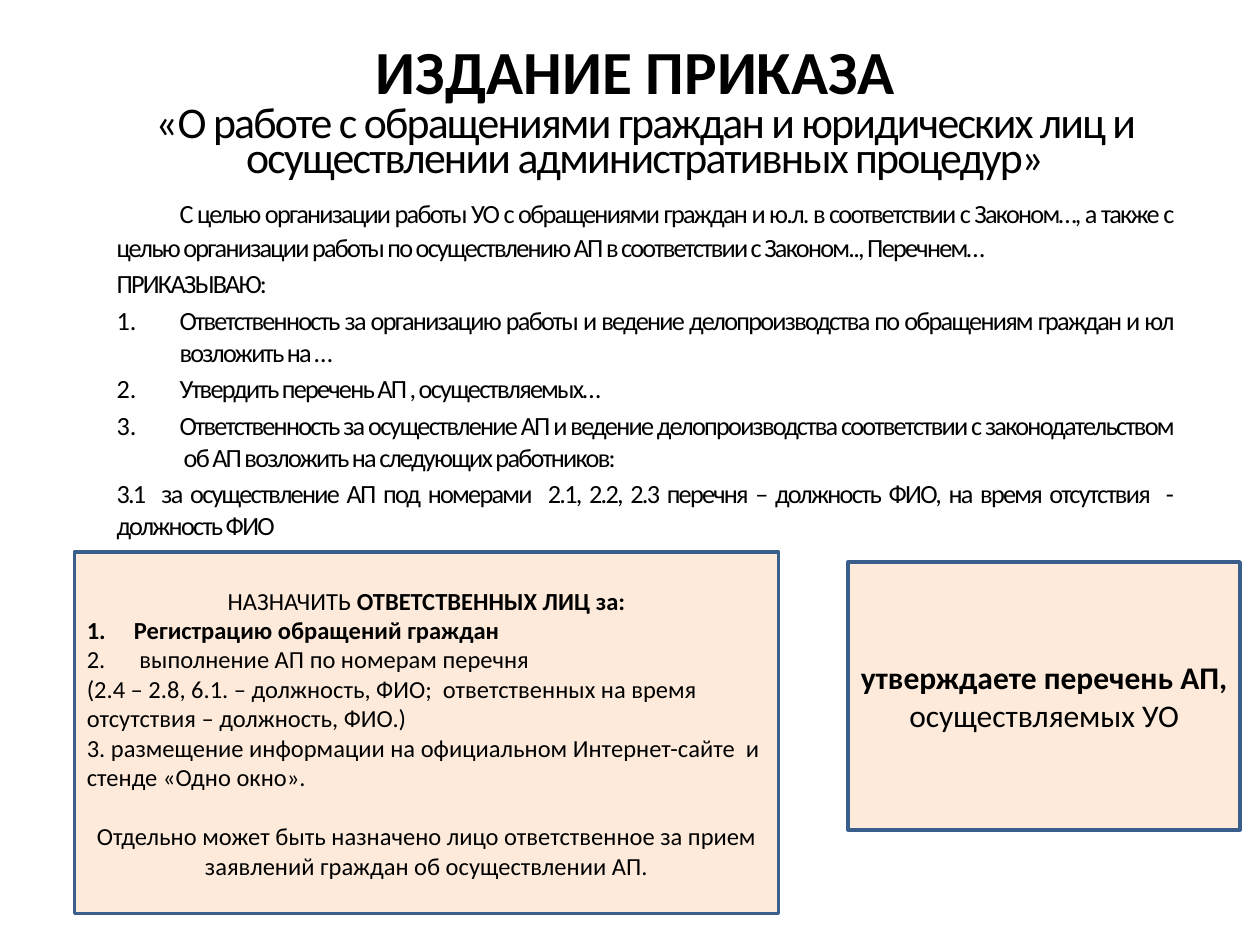
import pptx
import pptx.dml.color
import pptx.enum.shapes
import pptx.enum.text
import pptx.oxml.ns
import pptx.util
from lxml import etree
from pptx.util import Cm, Pt

BLACK = pptx.dml.color.RGBColor(0x00, 0x00, 0x00)
PEACH = pptx.dml.color.RGBColor(0xFD, 0xEA, 0xDA)
BLUE = pptx.dml.color.RGBColor(0x3A, 0x5F, 0x8C)
FONT = "Calibri"
ALIGN = pptx.enum.text.PP_ALIGN
ANCHOR = pptx.enum.text.MSO_ANCHOR


def prepare_frame(box, anchor):
    frame = box.text_frame
    frame.word_wrap = True
    frame.vertical_anchor = anchor
    return frame


def add_text_box(page, left, top, width, height, anchor=ANCHOR.TOP):
    box = page.shapes.add_textbox(Cm(left), Cm(top), Cm(width), Cm(height))
    return prepare_frame(box, anchor)


def add_panel(page, left, top, width, height):
    panel = page.shapes.add_shape(
        pptx.enum.shapes.MSO_SHAPE.RECTANGLE, Cm(left), Cm(top), Cm(width), Cm(height)
    )
    panel.shadow.inherit = False
    panel.fill.solid()
    panel.fill.fore_color.rgb = PEACH
    panel.line.color.rgb = BLUE
    panel.line.width = Pt(2)
    return prepare_frame(panel, ANCHOR.MIDDLE)


def add_para(frame, align, before=0, line=None):
    first = frame.paragraphs[0]
    para = frame.add_paragraph() if first.runs else first
    para.alignment = align
    para.space_before = Pt(before)
    if line:
        para.line_spacing = Pt(line)
    return para


def add_span(para, text, size, bold=False, spacing=0):
    span = para.add_run()
    span.text = text
    span.font.name = FONT
    span.font.size = Pt(size)
    span.font.bold = bold
    span.font.color.rgb = BLACK
    if spacing:
        span.font._element.set("spc", str(spacing * 100))


def number_para(para, indent):
    properties = para._p.get_or_add_pPr()
    properties.set("marL", str(Cm(indent)))
    properties.set("indent", str(-Cm(indent)))
    font = etree.SubElement(properties, pptx.oxml.ns.qn("a:buFont"))
    font.set("typeface", FONT)
    numbering = etree.SubElement(properties, pptx.oxml.ns.qn("a:buAutoNum"))
    numbering.set("type", "arabicPeriod")


def add_title(page):
    frame = add_text_box(page, 1.5, 0.76, 22.63, 1.32, ANCHOR.MIDDLE)
    add_span(add_para(frame, ALIGN.CENTER), "ИЗДАНИЕ ПРИКАЗА", 35, bold=True)


def add_order(page):
    frame = add_text_box(page, 2.1, 2.13, 21.8, 13.8)
    subject = add_para(frame, ALIGN.CENTER, before=5, line=20)
    add_span(subject, "«", 25)
    add_span(
        subject,
        "О работе с обращениями граждан и юридических лиц и осуществлении административных процедур»",
        25,
        spacing=-1,
    )
    purpose = add_para(frame, ALIGN.JUSTIFY, before=4)
    add_span(purpose, "\t", 20, spacing=-1)
    add_span(
        purpose,
        "С целью организации работы УО с обращениями граждан и ю.л. в соответствии с Законом…, "
        "а также с целью организации работы по осуществлению АП в соответствии с Законом.., Перечнем…",
        15,
        spacing=-1,
    )
    clauses = [
        ("ПРИКАЗЫВАЮ:", False),
        ("Ответственность за организацию работы и ведение делопроизводства "
         "по обращениям граждан и юл возложить на …", True),
        ("Утвердить перечень АП , осуществляемых…", True),
        ("Ответственность за осуществление АП и ведение делопроизводства соответствии "
         "с законодательством  об АП возложить на следующих работников:", True),
        ("3.1  за осуществление АП под номерами  2.1, 2.2, 2.3 перечня – должность ФИО, "
         "на время отсутствия  - должность ФИО", False),
    ]
    for text, numbered in clauses:
        para = add_para(frame, ALIGN.JUSTIFY, before=3)
        if numbered:
            number_para(para, 1.27)
        add_span(para, text, 15, spacing=-1)


def add_duties(page):
    frame = add_panel(page, 1.5, 11.13, 14.2, 7.29)
    heading = add_para(frame, ALIGN.CENTER)
    add_span(heading, "НАЗНАЧИТЬ ", 14)
    add_span(heading, "ОТВЕТСТВЕННЫХ ЛИЦ за:", 14, bold=True)
    for text, bold in [
        ("Регистрацию обращений граждан", True),
        (" выполнение АП по номерам перечня", False),
    ]:
        para = add_para(frame, ALIGN.LEFT)
        number_para(para, 0.95)
        add_span(para, text, 14, bold=bold)
    for text in [
        "(2.4 – 2.8, 6.1. – должность, ФИО;  ответственных на время отсутствия – должность, ФИО.)",
        "3. размещение информации на официальном Интернет-сайте  и стенде «Одно окно».",
    ]:
        add_span(add_para(frame, ALIGN.LEFT), text, 14)
    add_span(
        add_para(frame, ALIGN.CENTER, before=17),
        "Отдельно может быть назначено лицо ответственное за прием заявлений граждан об осуществлении АП.",
        14,
    )


def add_approval(page):
    para = add_para(add_panel(page, 17.1, 11.33, 7.9, 5.4), ALIGN.CENTER)
    add_span(para, "утверждаете перечень АП, ", 18, bold=True)
    add_span(para, "осуществляемых УО", 18)


def main():
    deck = pptx.Presentation()
    deck.slide_width, deck.slide_height = Cm(25.4), Cm(19.05)
    page = deck.slides.add_slide(deck.slide_layouts[6])
    add_title(page)
    add_order(page)
    add_duties(page)
    add_approval(page)
    deck.save("out.pptx")


if __name__ == "__main__":
    main()
